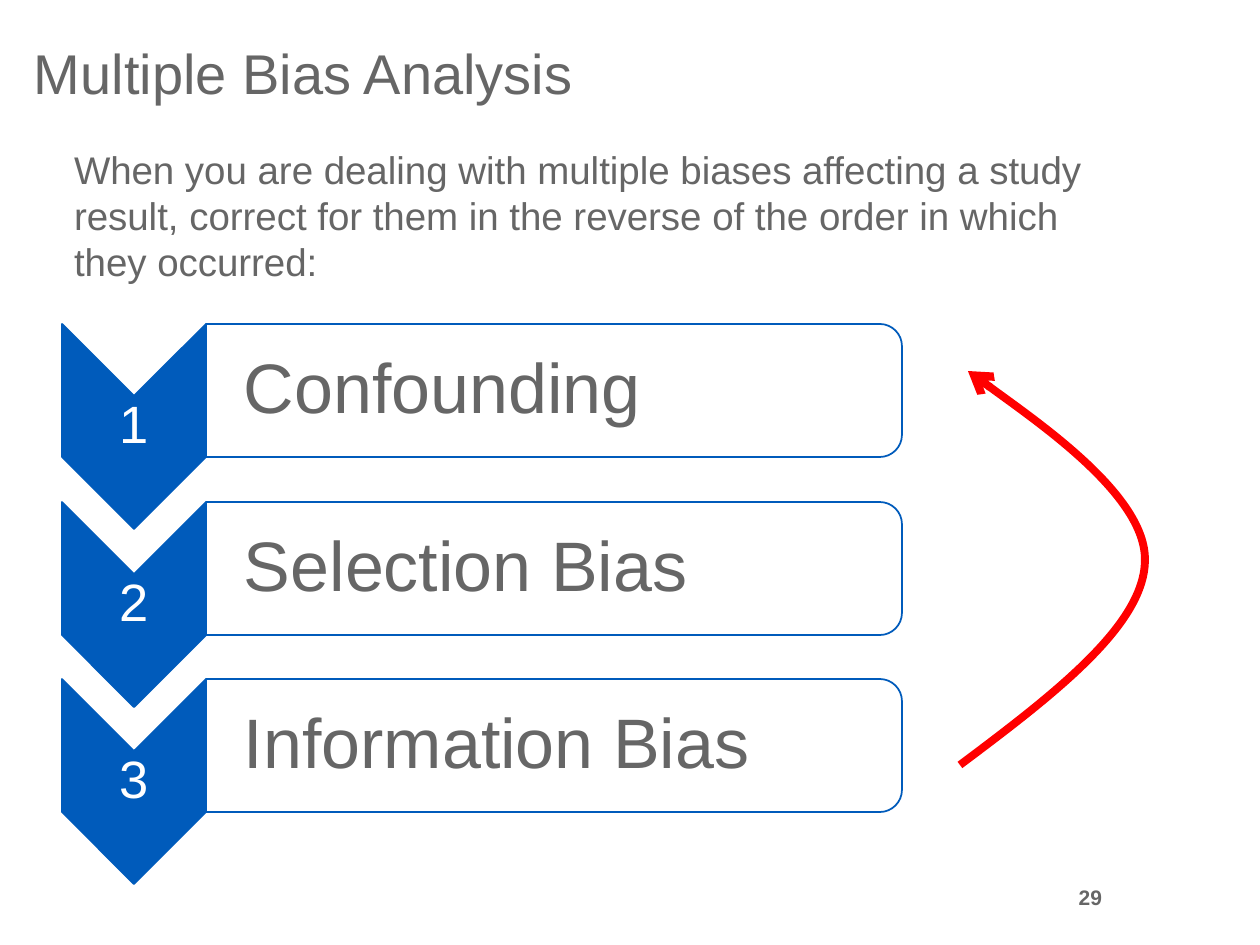
from dataclasses import dataclass

from lxml.etree import SubElement
from pptx import Presentation
from pptx.dml.color import RGBColor
from pptx.enum.text import MSO_ANCHOR as Anchor, PP_ALIGN as Align
from pptx.oxml.ns import qn
from pptx.util import Pt

TITLE = "Multiple Bias Analysis"
INTRO = (
    "When you are dealing with multiple biases affecting a study result, "
    "correct for them in the reverse of the order in which they occurred:"
)
BIASES = ["Confounding", "Selection Bias", "Information Bias"]
PAGE_NUMBER = "29"


@dataclass(frozen=True)
class Theme:
    font: str = "Arial"
    text: str = "666666"
    white: str = "FFFFFF"
    blue: str = "005BBB"
    red: str = "FF0000"
    title_size: int = 32
    intro_size: int = 22
    number_size: int = 30
    bias_size: int = 40
    page_size: int = 12


THEME = Theme()
SCALE = 914400 / 126
SLIDE = (1260, 945)
LEFT, TOP, PITCH = 62, 324, 177.6
CHEVRON_WIDTH, ROW_HEIGHT = 144, 133
BOX_RIGHT, CORNER, PULL = 902, 22, 10
ORDER_CURVE = [
    (960, 765), (1052, 696), (1144, 626), (1145, 561),
    (1147, 495), (968, 371), (968, 371),
]


def px(value):
    return round(value * SCALE)


def place(shape, left, top, width, height):
    shape.left, shape.top, shape.width, shape.height = map(px, (left, top, width, height))


def paint(fill, color):
    fill.solid()
    fill.fore_color.rgb = RGBColor.from_string(color)


def write(shape, text, *, size, color=THEME.text, bold=False, align=Align.LEFT,
          anchor=Anchor.TOP, insets=(13, 6, 13, 6), spacing=1.0, wrap=True):
    frame = shape.text_frame
    frame.word_wrap = wrap
    frame.vertical_anchor = anchor
    frame.margin_left, frame.margin_top, frame.margin_right, frame.margin_bottom = map(px, insets)
    para = frame.paragraphs[0]
    para.alignment = align
    para.line_spacing = spacing
    span = para.add_run()
    span.text = text
    span.font.name = THEME.font
    span.font.size = Pt(size)
    span.font.bold = bold
    span.font.color.rgb = RGBColor.from_string(color)


def add_text(page, text, area, **style):
    box = page.shapes.add_textbox(*map(px, area))
    write(box, text, **style)


def add_outline(page, points, line, width, fill, curves=(), close=True):
    builder = page.shapes.build_freeform(*points[0], scale=SCALE)
    builder.add_line_segments(points[1:], close=close)
    shape = builder.convert_to_shape()
    steps = list(next(shape.element.iter(qn("a:path"))))
    for first in curves:
        curve, *rest = steps[first:first + 3]
        curve.tag = qn("a:cubicBezTo")
        for step in rest:
            curve.append(step[0])
            step.getparent().remove(step)
    shape.shadow.inherit = False
    paint(shape.fill, fill)
    paint(shape.line.fill, line)
    shape.line.width = Pt(width)
    return shape


def add_bias(page, index, name):
    top = round(TOP + index * PITCH)
    bottom = top + ROW_HEIGHT
    right = LEFT + CHEVRON_WIDTH
    depth = CHEVRON_WIDTH // 2
    middle = LEFT + depth
    chevron = add_outline(page, [
        (right, top), (right, bottom), (middle, bottom + depth),
        (LEFT, bottom), (LEFT, top), (middle, top + depth),
    ], THEME.blue, 1, THEME.blue)
    write(chevron, str(index + 1), size=THEME.number_size, color=THEME.white,
          align=Align.CENTER, anchor=Anchor.MIDDLE, insets=(2, 74, 2, 74), spacing=0.9)

    upper = [(BOX_RIGHT - CORNER, top), (BOX_RIGHT - PULL, top),
             (BOX_RIGHT, top + PULL), (BOX_RIGHT, top + CORNER)]
    lower = [(x, top + bottom - y) for x, y in reversed(upper)]
    box = add_outline(page, [(right, top), *upper, *lower, (right, bottom)],
                      THEME.blue, 1, THEME.white, curves=(2, 6))
    write(box, name, size=THEME.bias_size, anchor=Anchor.MIDDLE,
          insets=(38, 10, 10, 10), spacing=0.9)


def add_order_arrow(page):
    arrow = add_outline(page, ORDER_CURVE, THEME.red, 4.5, THEME.white,
                        curves=(1, 4), close=False)
    line = next(arrow.element.iter(qn("a:ln")))
    SubElement(line, qn("a:tailEnd"), type="arrow")


def main():
    deck = Presentation()
    deck.slide_width, deck.slide_height = map(px, SLIDE)
    page = deck.slides.add_slide(deck.slide_layouts[5])
    title = page.shapes.title
    place(title, 21, 32, 704, 81)
    paint(title.fill, THEME.white)
    write(title, TITLE, size=THEME.title_size, wrap=False)
    add_text(page, INTRO, (61, 140, 1076, 432), size=THEME.intro_size)
    for index, name in enumerate(BIASES):
        add_bias(page, index, name)
    add_order_arrow(page)
    add_text(page, PAGE_NUMBER, (1041, 861, 74, 73), size=THEME.page_size,
             bold=True, align=Align.RIGHT, anchor=Anchor.MIDDLE)
    deck.save("out.pptx")


if __name__ == "__main__":
    main()
